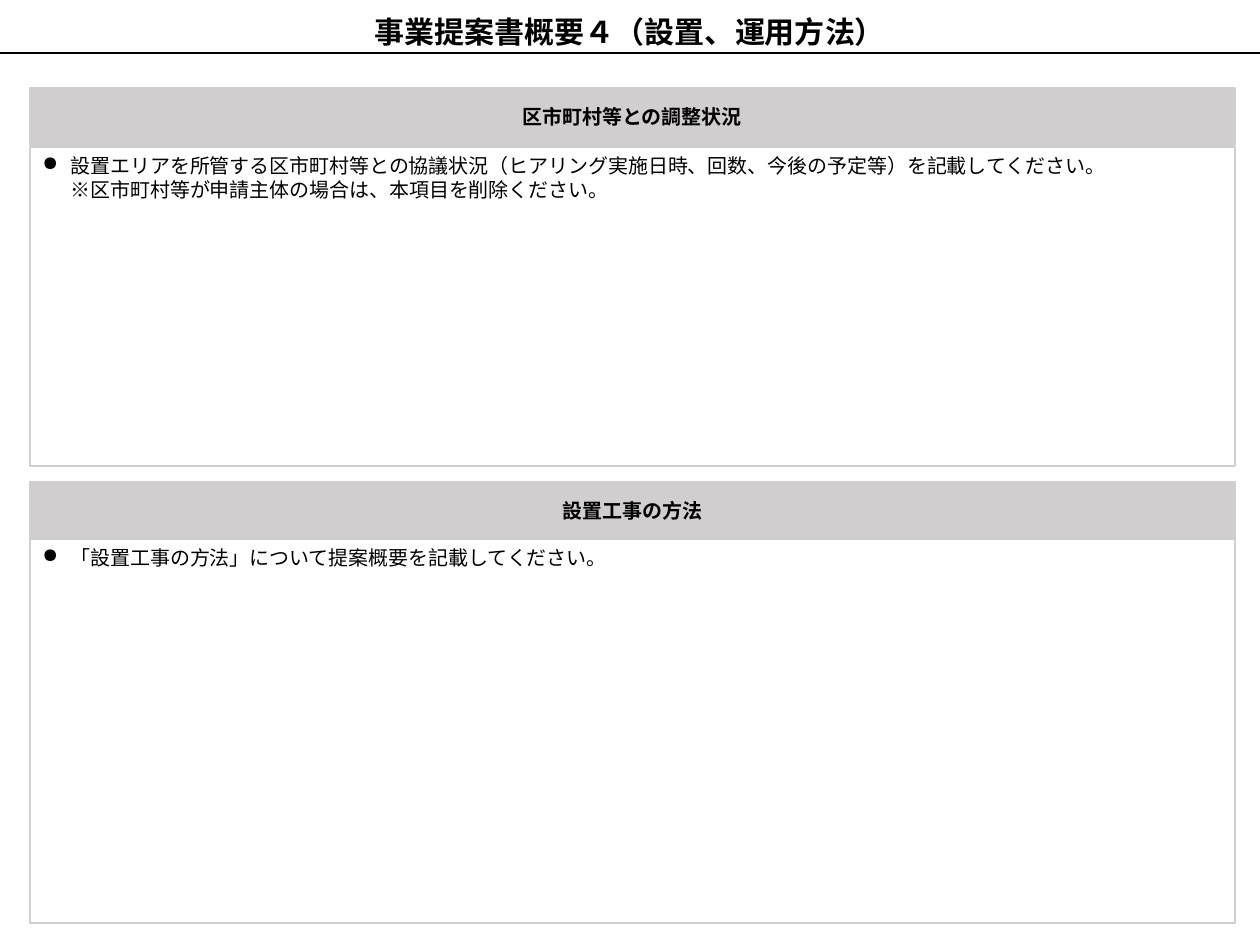
from copy import deepcopy
from dataclasses import dataclass

from lxml.etree import SubElement
from pptx import Presentation
from pptx.dml.color import RGBColor
from pptx.enum.shapes import MSO_CONNECTOR, MSO_SHAPE
from pptx.enum.text import MSO_ANCHOR as Anchor, MSO_AUTO_SIZE, PP_ALIGN as Align
from pptx.oxml.ns import qn
from pptx.util import Cm, Pt

BLACK = RGBColor(0x00, 0x00, 0x00)
WHITE = RGBColor(0xFF, 0xFF, 0xFF)
GRAY = RGBColor(0xD0, 0xCE, 0xCE)

# Lengths in centimetres
SLIDE_W, SLIDE_H = 35.56, 26.67
LEFT, WIDTH, HEADER_H = 0.84, 34.01, 1.6
INDENT = 0.79


@dataclass
class Section:
    heading: str
    body: str
    top: float
    body_top: float
    body_h: float


SECTIONS = [
    Section("区市町村等との調整状況",
            "設置エリアを所管する区市町村等との協議状況（ヒアリング実施日時、回数、今後の予定等）を記載してください。\n"
            "※区市町村等が申請主体の場合は、本項目を削除ください。",
            top=2.49, body_top=4.14, body_h=9.02),
    Section("設置工事の方法",
            "「設置工事の方法」について提案概要を記載してください。",
            top=13.61, body_top=15.21, body_h=10.85),
]


def write_text(sp, text: str, *, size: float = 16, font: str = "Calibri",
               bold: bool = False, align=Align.CENTER, anchor=Anchor.MIDDLE,
               bullet: str = "", wrap: bool = True) -> None:
    tf = sp.text_frame
    tf.auto_size = MSO_AUTO_SIZE.NONE
    tf.word_wrap = wrap
    tf.vertical_anchor = anchor
    p = tf.paragraphs[0]
    p.text = text
    p.alignment = align
    for r in p.runs:
        r.font.size, r.font.name, r.font.bold = Pt(size), font, bold
        r.font.color.rgb = BLACK
    # Line breaks take the size of the text around them
    for br in p._p.findall(qn("a:br")):
        br.append(deepcopy(p.runs[0]._r.rPr))
    if bullet:
        p.space_before = Pt(6)
        pPr = p._p.get_or_add_pPr()
        pPr.set("marL", str(Cm(INDENT)))
        pPr.set("indent", str(-Cm(INDENT)))
        SubElement(pPr, qn("a:buChar")).set("char", bullet)


def paint(sp, fill: RGBColor, line: RGBColor, width: float) -> None:
    sp.fill.solid()
    sp.fill.fore_color.rgb = fill
    sp.line.color.rgb = line
    sp.line.width = Pt(width)


def add_box(slide, top: float, height: float, fill: RGBColor):
    sp = slide.shapes.add_shape(MSO_SHAPE.RECTANGLE, Cm(LEFT), Cm(top), Cm(WIDTH), Cm(height))
    sp.shadow.inherit = False
    paint(sp, fill, GRAY, 1.5)
    tf = sp.text_frame
    tf.margin_left = tf.margin_right = Cm(0.36)
    tf.margin_top = tf.margin_bottom = Cm(0.18)
    return sp


def add_section(slide, section: Section) -> None:
    header = add_box(slide, section.top, HEADER_H, GRAY)
    write_text(header, section.heading, bold=True, wrap=False)
    body = add_box(slide, section.body_top, section.body_h, WHITE)
    write_text(body, section.body, align=Align.LEFT, anchor=Anchor.TOP, bullet="●")


def add_title(slide, text: str) -> None:
    title = slide.shapes.title
    title.left, title.top, title.width, title.height = Cm(0), Cm(0), Cm(SLIDE_W), Cm(1.8)
    paint(title, WHITE, WHITE, 1)
    write_text(title, text, size=24, font="Arial", bold=True)
    # Rule under the title
    rule = slide.shapes.add_connector(MSO_CONNECTOR.STRAIGHT, Cm(0), Cm(1.5), Cm(SLIDE_W), Cm(1.5))
    rule.line.color.rgb = BLACK
    rule.line.width = Pt(1.5)
    SubElement(rule._element.spPr, qn("a:effectLst"))


def main() -> None:
    prs = Presentation()
    prs.slide_width, prs.slide_height = Cm(SLIDE_W), Cm(SLIDE_H)
    slide = prs.slides.add_slide(prs.slide_layouts[5])
    add_title(slide, "事業提案書概要４（設置、運用方法）")
    for section in SECTIONS:
        add_section(slide, section)
    prs.save("out.pptx")


if __name__ == "__main__":
    main()
